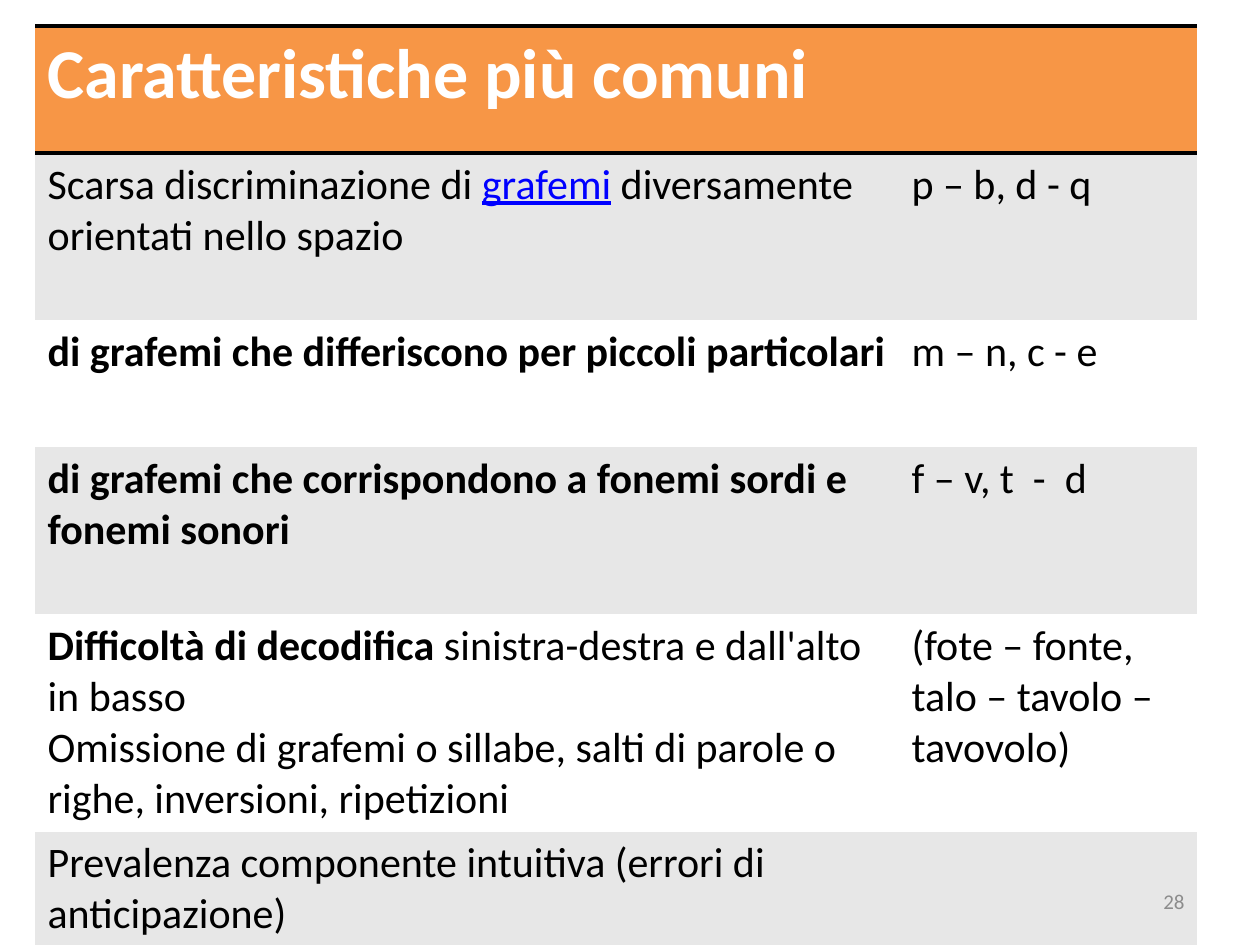
import pptx
import pptx.util
import pptx.dml.color
import pptx.enum.text
import pptx.oxml
import pptx.oxml.ns

PX = 914400 // 126
HUES = {"head": "F79646", "band": "E7E7E7", "plain": "FFFFFF",
        "text": "000000", "link": "0000FF", "page": "8C8C8C"}
COLS = [864, 298]
HEAD = "Caratteristiche più comuni"
ROWS = [
    (167, [[("Scarsa discriminazione di ", ""), ("grafemi", "link"),
            (" diversamente orientati nello spazio", "")]], "p – b, d - q"),
    (127, [[("di grafemi che differiscono per piccoli particolari", "bold")]],
     "m – n, c - e"),
    (167, [[("di grafemi che corrispondono a fonemi sordi e fonemi sonori", "bold")]],
     "f – v, t  -  d"),
    (217, [[("Difficoltà di decodifica ", "bold"),
            ("sinistra-destra e dall'alto in basso", "")],
           [("Omissione di grafemi o sillabe, salti di parole o righe, "
             "inversioni, ripetizioni", "")]],
     "(fote – fonte, talo – tavolo – tavovolo)"),
    (114, [[("Prevalenza componente intuitiva (errori di anticipazione)", "")]], ""),
]


def px(*nums):
    """Turn whole pixels into EMU lengths."""
    return [pptx.util.Emu(num * PX) for num in nums]


def tint(name):
    """Look up a named colour."""
    return pptx.dml.color.RGBColor.from_string(HUES[name])


def style(font, size, hue):
    """Set the face, size and colour of a font."""
    font.name = "Calibri"
    font.size = pptx.util.Pt(size)
    font.color.rgb = tint(hue)


def rule(cell, side):
    """Draw a black line of two points on one side of a cell."""
    line = pptx.oxml.parse_xml(
        f'<a:ln{side} {pptx.oxml.ns.nsdecls("a")} w="25400"><a:solidFill>'
        f'<a:srgbClr val="{HUES["text"]}"/></a:solidFill></a:ln{side}>')
    cell._tc.get_or_add_tcPr().append(line)


def paint(cell, hue):
    """Fill a cell with a named colour."""
    cell.fill.solid()
    cell.fill.fore_color.rgb = tint(hue)


def write(cell, paras):
    """Write paragraphs of marked runs into a cell."""
    frame = cell.text_frame
    for num, parts in enumerate(paras):
        para = frame.add_paragraph() if num else frame.paragraphs[0]
        style(para.font, 24, "text")
        for text, mark in parts:
            run = para.add_run()
            run.text = text
            if mark == "bold":
                run.font.bold = True
            elif mark == "link":
                run.font.underline = True
                run.font.color.rgb = tint("link")


def add_grid(slide, left, top, wide, high):
    """Place the table of common traits in the given box."""
    grid = slide.shapes.add_table(len(ROWS) + 1, 2, *px(left, top, wide, high)).table
    grid.first_row = grid.horz_banding = False
    grid._tbl.tblPr.find(pptx.oxml.ns.qn("a:tableStyleId")).text = (
        "{2D5ABB26-0587-4C30-8999-92F81FD0307C}")
    for col, size in zip(grid.columns, px(*COLS)):
        col.width = size
    sizes = [row[0] for row in ROWS]
    for row, size in zip(grid.rows, px(high - sum(sizes), *sizes)):
        row.height = size

    head = grid.cell(0, 0)
    head.merge(grid.cell(0, 1))
    for cell in grid.rows[0].cells:
        rule(cell, "T")
        rule(cell, "B")
        paint(cell, "head")
    head.text = HEAD
    font = head.text_frame.paragraphs[0].font
    style(font, 40, "plain")
    font.bold = True

    for num, (_, trait, sample) in enumerate(ROWS, 1):
        pair = [trait, [[(sample, "")]] if sample else []]
        for cell, paras in zip(grid.rows[num].cells, pair):
            paint(cell, "band" if num % 2 else "plain")
            write(cell, paras)


def add_page(slide, left, top, wide, high):
    """Place the page number in the given box."""
    frame = slide.shapes.add_textbox(*px(left, top, wide, high)).text_frame
    frame.word_wrap = True
    frame.vertical_anchor = pptx.enum.text.MSO_ANCHOR.MIDDLE
    para = frame.paragraphs[0]
    para.text = "28"
    para.alignment = pptx.enum.text.PP_ALIGN.RIGHT
    style(para.font, 12, "page")


def main():
    """Build the slide and save it."""
    deck = pptx.Presentation()
    deck.slide_width, deck.slide_height = px(1260, 945)
    slide = deck.slides.add_slide(deck.slide_layouts[6])
    add_grid(slide, 35, 26, sum(COLS), 919)
    add_page(slide, 903, 876, 294, 50)
    deck.save("out.pptx")


if __name__ == "__main__":
    main()
